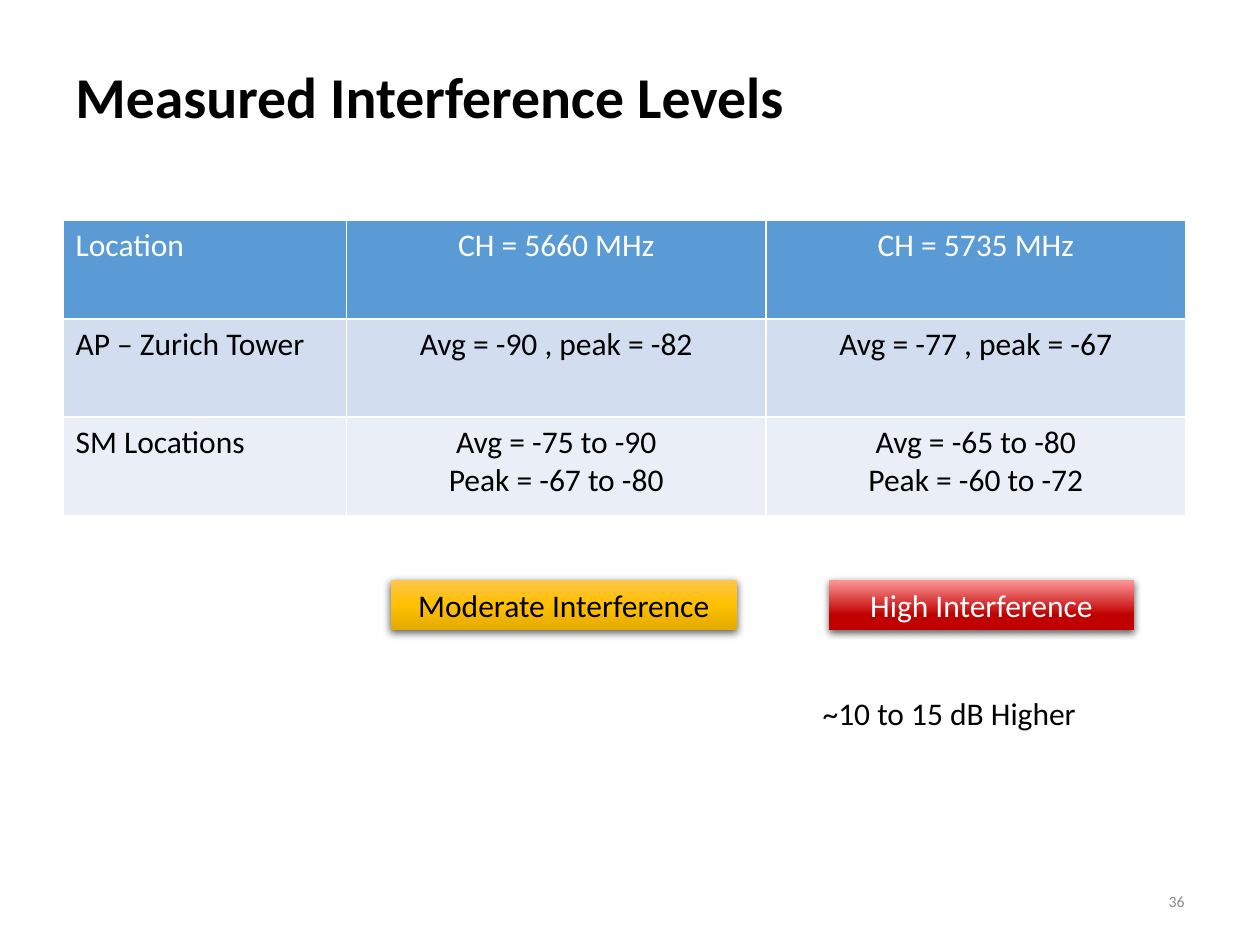
import pptx
import pptx.dml.color
import pptx.enum.shapes
import pptx.enum.text
import pptx.oxml
import pptx.oxml.ns
import pptx.util

Inches = pptx.util.Inches
Pt = pptx.util.Pt
Align = pptx.enum.text.PP_ALIGN
Anchor = pptx.enum.text.MSO_ANCHOR
Fit = pptx.enum.text.MSO_AUTO_SIZE
NS = pptx.oxml.ns.nsdecls("a")


def rgb(code):
    return pptx.dml.color.RGBColor.from_string(code)


def write(frame, text, color="000000", size=18, align=Align.LEFT, bold=False):
    frame.text = text
    for par in frame.paragraphs:
        par.alignment = align
        for run in par.runs:
            run.font.name = "Calibri"
            run.font.size = Pt(size)
            run.font.bold = bold
            run.font.color.rgb = rgb(color)


deck = pptx.Presentation()
deck.slide_width = Inches(10)
deck.slide_height = Inches(7.5)
slide = deck.slides.add_slide(deck.slide_layouts[6])
shapes = slide.shapes

# Title and slide number
title = shapes.add_textbox(Inches(0.5), Inches(0.3), Inches(8.62), Inches(0.98))
frame = title.text_frame
frame.word_wrap = True
frame.vertical_anchor = Anchor.MIDDLE
write(frame, "Measured Interference Levels", size=33, bold=True)
frame.paragraphs[0].line_spacing = 0.9

number = shapes.add_textbox(Inches(8.92), Inches(6.95), Inches(0.58), Inches(0.4))
frame = number.text_frame
frame.word_wrap = True
frame.vertical_anchor = Anchor.MIDDLE
write(frame, "36", "8C8C8C", 9, Align.RIGHT)

# Table of levels: row fill, text colour, cells
rows = [
    ("5B9BD5", "FFFFFF", ["Location", "CH = 5660 MHz", "CH = 5735 MHz"]),
    ("D2DEEF", "000000",
     ["AP – Zurich Tower", "Avg = -90 , peak = -82", "Avg = -77 , peak = -67"]),
    ("EAEFF7", "000000",
     ["SM Locations", "Avg = -75 to -90\nPeak = -67 to -80",
      "Avg = -65 to -80\nPeak = -60 to -72"]),
]
table = shapes.add_table(
    3, 3, Inches(0.5), Inches(1.75), Inches(8.92), Inches(2.33)).table
for col, width in zip(table.columns, (2.25, 3.33, 3.33)):
    col.width = Inches(width)
for r, (fill, color, texts) in enumerate(rows):
    table.rows[r].height = Inches(0.78)
    for c, text in enumerate(texts):
        cell = table.cell(r, c)
        props = cell._tc.get_or_add_tcPr()
        for side in "LRTB":
            props.append(pptx.oxml.parse_xml(
                f'<a:ln{side} {NS} w="12700"><a:solidFill>'
                f'<a:srgbClr val="FFFFFF"/></a:solidFill></a:ln{side}>'))
        cell.fill.solid()
        cell.fill.fore_color.rgb = rgb(fill)
        write(cell.text_frame, text, color,
              align=Align.CENTER if c else Align.LEFT)

# Verdict labels: left, width, text, text colour, gradient stops
labels = [
    (3.1, 2.75, "Moderate Interference", "000000",
     [(0, "FFC64B"), (50, "FFC000"), (100, "E3AB00")]),
    (6.58, 2.42, "High Interference", "FFFFFF",
     [(0, "FF9999"), (70, "C00000")]),
]
for left, width, text, color, stops in labels:
    label = shapes.add_shape(
        pptx.enum.shapes.MSO_SHAPE.RECTANGLE,
        Inches(left), Inches(4.6), Inches(width), Inches(0.4))
    label.line.fill.background()
    label.fill.gradient()
    label.fill.gradient_angle = 270
    props = label._element.spPr
    ramp = props.find(".//" + pptx.oxml.ns.qn("a:gsLst"))
    for stop in list(ramp):
        ramp.remove(stop)
    for place, code in stops:
        ramp.append(pptx.oxml.parse_xml(
            f'<a:gs {NS} pos="{place * 1000}"><a:srgbClr val="{code}"/></a:gs>'))
    label.shadow.inherit = False
    props.find(pptx.oxml.ns.qn("a:effectLst")).append(pptx.oxml.parse_xml(
        f'<a:outerShdw {NS} blurRad="{Pt(4.5)}" dist="{Pt(1.5)}" dir="5400000" '
        'rotWithShape="0"><a:srgbClr val="000000"><a:alpha val="63000"/>'
        '</a:srgbClr></a:outerShdw>'))
    frame = label.text_frame
    frame.word_wrap = True
    frame.auto_size = Fit.SHAPE_TO_FIT_TEXT
    frame.vertical_anchor = Anchor.TOP
    write(frame, text, color, align=Align.CENTER)

# Remark below the labels
note = shapes.add_textbox(Inches(6.43), Inches(5.46), Inches(2.45), Inches(0.4))
note.text_frame.word_wrap = False
note.text_frame.auto_size = Fit.SHAPE_TO_FIT_TEXT
write(note.text_frame, "~10 to 15 dB Higher")

deck.save("out.pptx")
